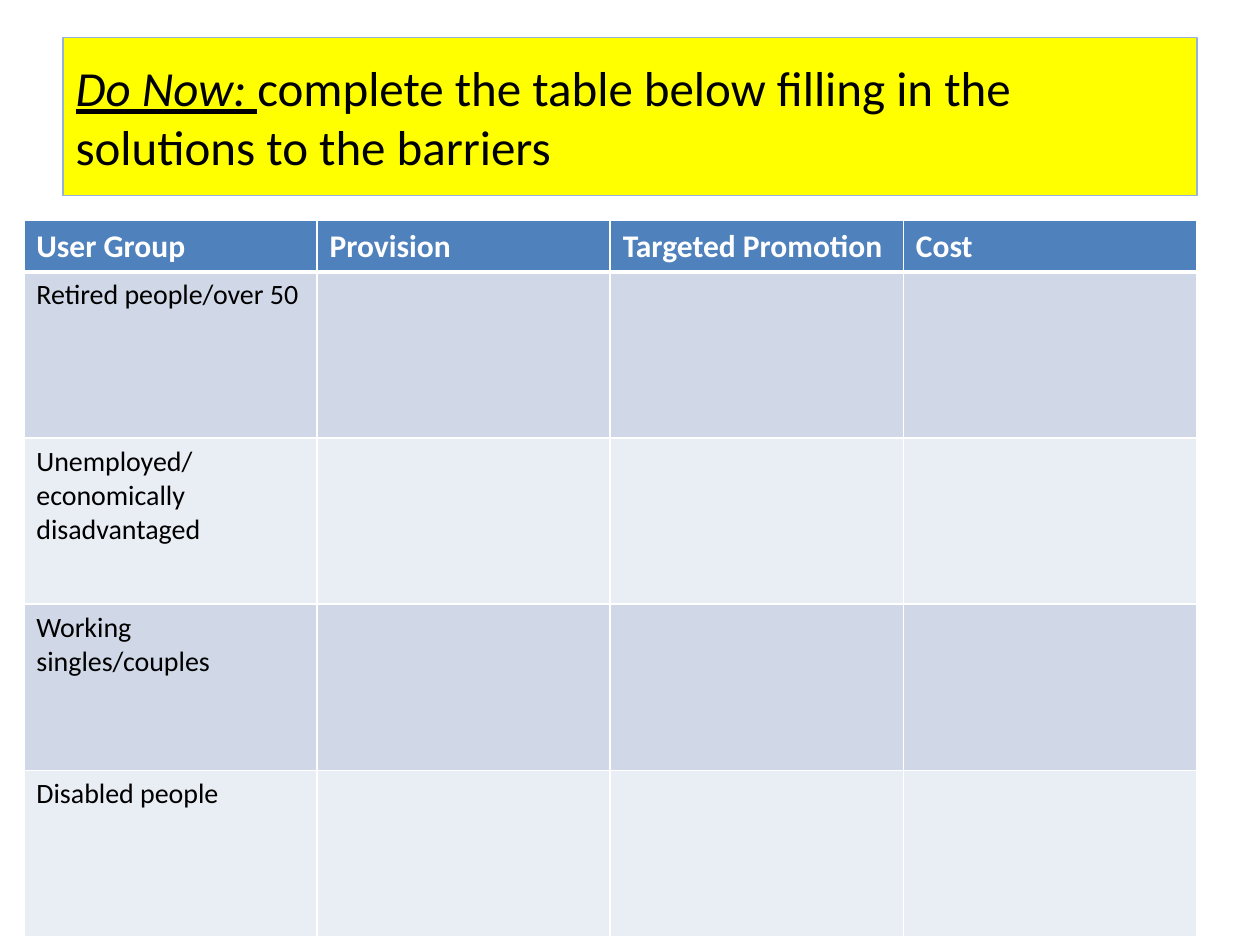
from lxml.etree import SubElement
from pptx import Presentation
from pptx.dml.color import RGBColor
from pptx.enum.text import MSO_ANCHOR, PP_ALIGN
from pptx.oxml.ns import qn
from pptx.util import Cm, Pt

COLORS = {
    "title": "FFFF00",
    "title_line": "95B3D7",
    "header": "4F81BD",
    "odd_row": "D0D8E8",
    "even_row": "E9EDF4",
    "white": "FFFFFF",
    "black": "000000",
}
HEADINGS = ["User Group", "Provision", "Targeted Promotion", "Cost"]
USER_GROUPS = [
    "Retired people/over 50",
    "Unemployed/economically disadvantaged",
    "Working singles/couples",
    "Disabled people",
]
HEADER_HEIGHT, ROW_HEIGHT, COLUMN_WIDTH = Cm(1.02), Cm(3.35), Cm(5.91)


def format_font(font, color, **values):
    font.color.rgb = RGBColor.from_string(COLORS[color])
    for name, value in {"name": "Calibri", **values}.items():
        setattr(font, name, value)


def add_borders(cell, bottom_width):
    properties = cell._tc.get_or_add_tcPr()
    widths = {"a:lnL": Pt(1), "a:lnR": Pt(1), "a:lnT": Pt(1), "a:lnB": bottom_width}
    for tag, width in widths.items():
        line = SubElement(properties, qn(tag), w=str(width))
        fill = SubElement(line, qn("a:solidFill"))
        SubElement(fill, qn("a:srgbClr"), val=COLORS["white"])


presentation = Presentation()
presentation.slide_width, presentation.slide_height = Cm(25.4), Cm(19.05)
slide = presentation.slides.add_slide(presentation.slide_layouts[5])

# Title box
title = slide.shapes.title
title.left, title.top, title.width, title.height = Cm(1.27), Cm(0.76), Cm(22.86), Cm(3.18)
title.fill.solid()
title.fill.fore_color.rgb = RGBColor.from_string(COLORS["title"])
title.line.color.rgb = RGBColor.from_string(COLORS["title_line"])
title.line.width = Pt(0.75)
title.text_frame.vertical_anchor = MSO_ANCHOR.MIDDLE
paragraph = title.text_frame.paragraphs[0]
paragraph.alignment = PP_ALIGN.LEFT
for text, emphasis in [
    ("Do Now: ", True),
    ("complete the table below filling in the solutions to the barriers", False),
]:
    run = paragraph.add_run()
    run.text = text
    format_font(run.font, "black", size=Pt(28), italic=emphasis, underline=emphasis)

# Table of barriers, with empty cells to fill in
rows = [HEADINGS] + [[group, "", "", ""] for group in USER_GROUPS]
table = slide.shapes.add_table(
    len(rows), len(HEADINGS), Cm(0.48), Cm(4.45),
    COLUMN_WIDTH * len(HEADINGS), HEADER_HEIGHT + ROW_HEIGHT * len(USER_GROUPS),
).table
for column in table.columns:
    column.width = COLUMN_WIDTH

for row_index, texts in enumerate(rows):
    is_header = row_index == 0
    table.rows[row_index].height = HEADER_HEIGHT if is_header else ROW_HEIGHT
    fill_color = "header" if is_header else "odd_row" if row_index % 2 else "even_row"
    for column_index, text in enumerate(texts):
        cell = table.cell(row_index, column_index)
        add_borders(cell, Pt(3) if is_header else Pt(1))
        cell.fill.solid()
        cell.fill.fore_color.rgb = RGBColor.from_string(COLORS[fill_color])
        if text:
            cell.text = text
            format_font(
                cell.text_frame.paragraphs[0].runs[0].font,
                "white" if is_header else "black",
                size=Pt(18 if is_header else 16),
                bold=is_header,
            )

presentation.save("out.pptx")
